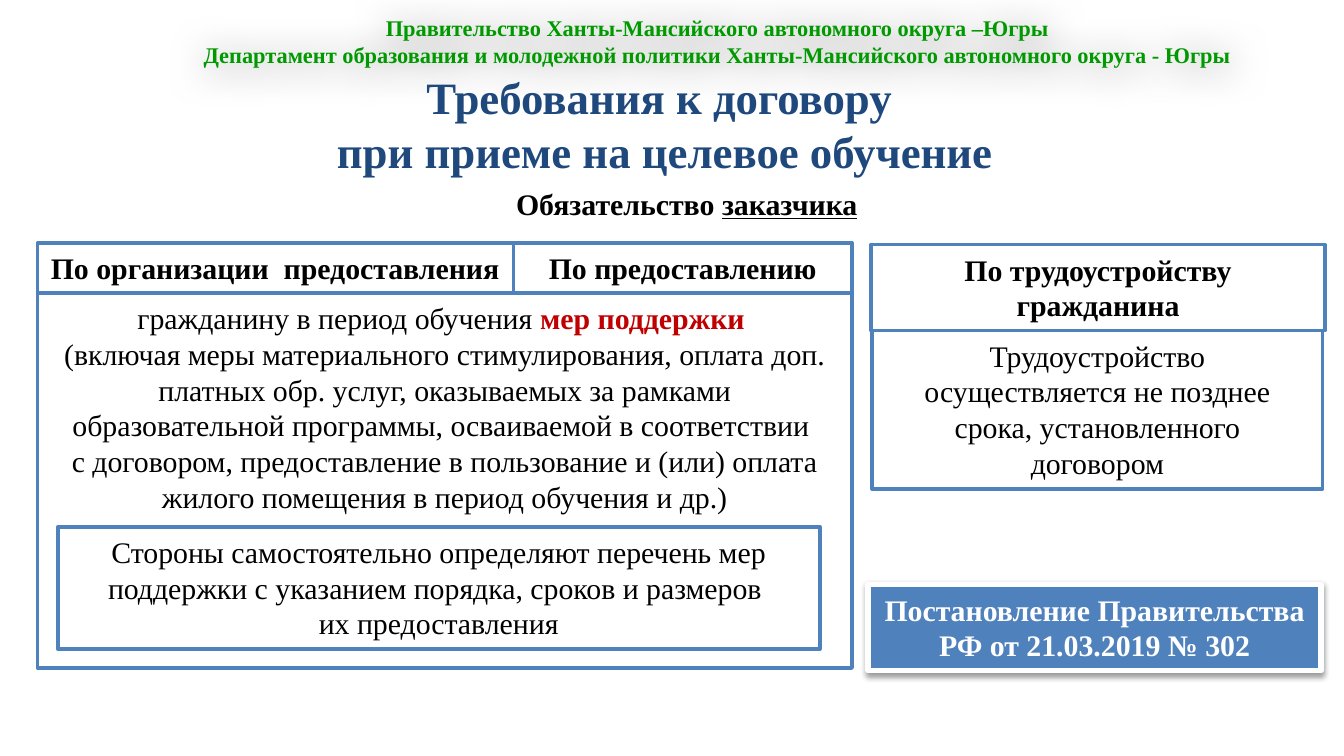
from dataclasses import dataclass
from typing import Optional

from lxml import etree
from pptx import Presentation
from pptx.dml.color import RGBColor
from pptx.enum.shapes import MSO_SHAPE
from pptx.enum.text import MSO_ANCHOR, MSO_AUTO_SIZE, PP_ALIGN
from pptx.oxml.ns import qn
from pptx.util import Inches, Pt

RECT = MSO_SHAPE.RECTANGLE
TOP = MSO_ANCHOR.TOP
GROW, FIXED = MSO_AUTO_SIZE.SHAPE_TO_FIT_TEXT, MSO_AUTO_SIZE.NONE
LEFT, CENTER = PP_ALIGN.LEFT, PP_ALIGN.CENTER
SLIDE_WIDTH = 10
SLIDE_HEIGHT = SLIDE_WIDTH * 9 / 16


@dataclass(frozen=True)
class Theme:
    font: str = "Times New Roman"
    black: str = "000000"
    white: str = "FFFFFF"
    blue: str = "4F81BD"
    navy: str = "1F497D"
    green: str = "009900"
    red: str = "C00000"
    small: int = 12
    body: int = 16
    title: int = 24


T = Theme()


@dataclass(frozen=True)
class Run:
    text: str
    color: Optional[str] = None
    bold: Optional[bool] = None
    underline: Optional[bool] = None


@dataclass(frozen=True)
class Shadow:
    blur: float
    distance: float
    opacity: int


@dataclass(frozen=True)
class Block:
    at: tuple[float, float, float, float]
    paragraphs: tuple[tuple[Run, ...], ...]
    size: int = T.body
    color: str = T.black
    bold: bool = False
    align: PP_ALIGN = CENTER
    grow: bool = True
    fill: Optional[str] = None
    line: str = T.blue
    line_width: float = 2
    shadow: Optional[Shadow] = None


def lines(*texts: str) -> tuple[tuple[Run, ...], ...]:
    return tuple((Run(text),) for text in texts)


BLOCKS = [
    Block((1.11, 0.06, 8.46, 0.5), lines(
        "Правительство Ханты-Мансийского автономного округа –Югры",
        "Департамент образования и молодежной политики Ханты-Мансийского автономного округа - Югры"),
        size=T.small, color=T.green, bold=True, shadow=Shadow(20, 1, 50)),
    Block((0.3, 0.47, 9.29, 0.47), lines(
        "Требования к договору ", "при приеме на целевое обучение"),
        size=T.title, color=T.navy, bold=True, grow=False),
    Block((0.28, 2.18, 6.06, 2.79), (
        (Run("гражданину в период обучения "), Run("мер поддержки ", T.red, True)),
        *lines(
            "(включая меры материального стимулирования, оплата доп. платных обр. услуг, "
            "оказываемых за рамками образовательной программы, осваиваемой в соответствии ",
            "с договором, предоставление в пользование и (или) оплата жилого помещения "
            "в период обучения и др.)")),
        fill=T.white),
    Block((0.28, 1.81, 3.62, 0.37), lines("По организации  предоставления"),
          bold=True, align=LEFT, fill=T.white),
    Block((1.96, 1.33, 6.3, 0.37),
          ((Run("Обязательство "), Run("заказчика", underline=True)),), bold=True),
    Block((0.43, 3.92, 5.67, 0.91), lines(
        "Стороны самостоятельно определяют перечень мер поддержки с указанием порядка, "
        "сроков и размеров ", "их предоставления"), fill=T.white),
    Block((3.82, 1.81, 2.52, 0.37), lines("По предоставлению"), bold=True, fill=T.white),
    Block((6.49, 2.46, 3.35, 1.18), lines(
        "Трудоустройство осуществляется не позднее срока, установленного договором"),
        fill=T.white),
    Block((6.46, 4.35, 3.37, 0.64), lines("Постановление Правительства РФ от 21.03.2019 № 302"),
          color=T.white, bold=True, fill=T.blue, line=T.white, line_width=3,
          shadow=Shadow(3.1, 1.6, 38)),
    Block((6.48, 1.82, 3.38, 0.64), lines("По трудоустройству гражданина"),
          bold=True, fill=T.white),
]


def add_shadow(sp, shadow: Shadow) -> None:
    sp.shadow.inherit = False
    effects = sp._element.spPr.find(qn("a:effectLst"))
    outer = etree.SubElement(effects, qn("a:outerShdw"), blurRad=str(Pt(shadow.blur)),
                             dist=str(Pt(shadow.distance)), dir="5400000", rotWithShape="0")
    color = etree.SubElement(outer, qn("a:srgbClr"), val=T.black)
    etree.SubElement(color, qn("a:alpha"), val=str(shadow.opacity * 1000))


def write_text(tf, block: Block) -> None:
    tf.word_wrap = True
    tf.auto_size = GROW if block.grow else FIXED
    tf.vertical_anchor = TOP
    for i, runs in enumerate(block.paragraphs):
        p = tf.add_paragraph() if i else tf.paragraphs[0]
        p.alignment = block.align
        p.font.name = T.font
        p.font.size = Pt(block.size)
        p.font.bold = block.bold
        p.font.color.rgb = RGBColor.from_string(block.color)
        for run in runs:
            r = p.add_run()
            r.text = run.text
            r.font.bold = run.bold
            r.font.underline = run.underline
            r.font.color.rgb = RGBColor.from_string(run.color or block.color)


def draw_block(s, block: Block) -> None:
    box = [Inches(v) for v in block.at]
    if block.fill:
        sp = s.shapes.add_shape(RECT, *box)
        sp.shadow.inherit = False
        sp.fill.solid()
        sp.fill.fore_color.rgb = RGBColor.from_string(block.fill)
        sp.line.color.rgb = RGBColor.from_string(block.line)
        sp.line.width = Pt(block.line_width)
    else:
        sp = s.shapes.add_textbox(*box)
    if block.shadow:
        add_shadow(sp, block.shadow)
    write_text(sp.text_frame, block)


def main() -> None:
    prs = Presentation()
    prs.slide_width, prs.slide_height = Inches(SLIDE_WIDTH), Inches(SLIDE_HEIGHT)
    s = prs.slides.add_slide(prs.slide_layouts[6])
    for block in BLOCKS:
        draw_block(s, block)
    prs.save("out.pptx")


if __name__ == "__main__":
    main()
